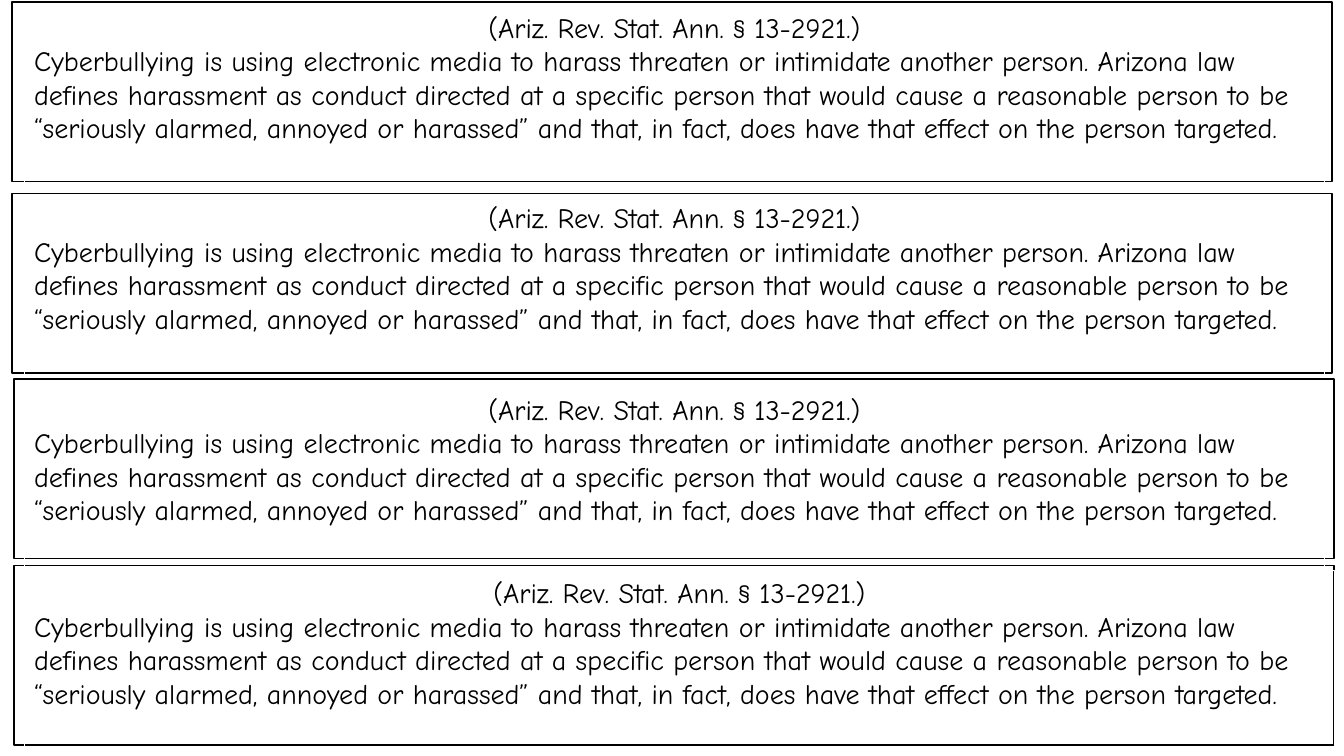
from pptx import Presentation
from pptx.dml.color import RGBColor
from pptx.enum.shapes import MSO_SHAPE
from pptx.enum.text import MSO_ANCHOR, MSO_AUTO_SIZE, PP_ALIGN
from pptx.util import Inches, Pt

BLACK = RGBColor(0x00, 0x00, 0x00)
WHITE = RGBColor(0xFF, 0xFF, 0xFF)
FONT = "Comic Neue"
CARD_HEIGHT = 1.78
FRAME_WIDTH = 13.09
FRAMES = [(0.12, 0.02), (0.12, 1.92), (0.14, 3.76), (0.14, 5.61)]
PASSAGE_LEFT = 0.24
PASSAGES = [(0.05, 12.9), (1.94, 12.9), (3.84, 12.9), (5.66, 13)]
CITATION = "(Ariz. Rev. Stat. Ann. § 13-2921.)"
DEFINITION = (
    "Cyberbullying is using electronic media to harass threaten or intimidate "
    "another person. Arizona law defines harassment as conduct directed at a "
    "specific person that would cause a reasonable person to be “seriously "
    "alarmed, annoyed or harassed” and that, in fact, does have that effect on "
    "the person targeted."
)


def add_box(slide, left, top, width, line_color, line_width):
    """Add a card-high rectangle with the given outline."""
    box = slide.shapes.add_shape(
        MSO_SHAPE.RECTANGLE,
        Inches(left), Inches(top), Inches(width), Inches(CARD_HEIGHT),
    )
    box.shadow.inherit = False
    box.line.color.rgb = line_color
    box.line.width = Pt(line_width)
    return box


def add_frame(slide, left, top):
    """Add the black outline of one card."""
    frame = add_box(slide, left, top, FRAME_WIDTH, BLACK, 1)
    frame.fill.solid()
    frame.fill.fore_color.rgb = WHITE


def write_paragraph(paragraph, text, alignment):
    """Write one paragraph of the statute."""
    paragraph.alignment = alignment
    run = paragraph.add_run()
    run.text = text
    run.font.name = FONT
    run.font.size = Pt(20)
    run.font.color.rgb = BLACK


def add_passage(slide, top, width):
    """Add the citation and definition of one card."""
    passage = add_box(slide, PASSAGE_LEFT, top, width, WHITE, 0.75)
    passage.fill.background()
    frame = passage.text_frame
    frame.word_wrap = True
    frame.auto_size = MSO_AUTO_SIZE.SHAPE_TO_FIT_TEXT
    frame.vertical_anchor = MSO_ANCHOR.TOP
    frame.margin_bottom = Inches(0.4)
    write_paragraph(frame.paragraphs[0], CITATION, PP_ALIGN.CENTER)
    write_paragraph(frame.add_paragraph(), DEFINITION, PP_ALIGN.LEFT)


def main():
    """Build the slide of four statute cards."""
    deck = Presentation()
    deck.slide_width = Inches(13.33)
    deck.slide_height = Inches(7.5)
    slide = deck.slides.add_slide(deck.slide_layouts[6])
    for left, top in FRAMES:
        add_frame(slide, left, top)
    for top, width in PASSAGES:
        add_passage(slide, top, width)
    deck.save("out.pptx")


if __name__ == "__main__":
    main()
